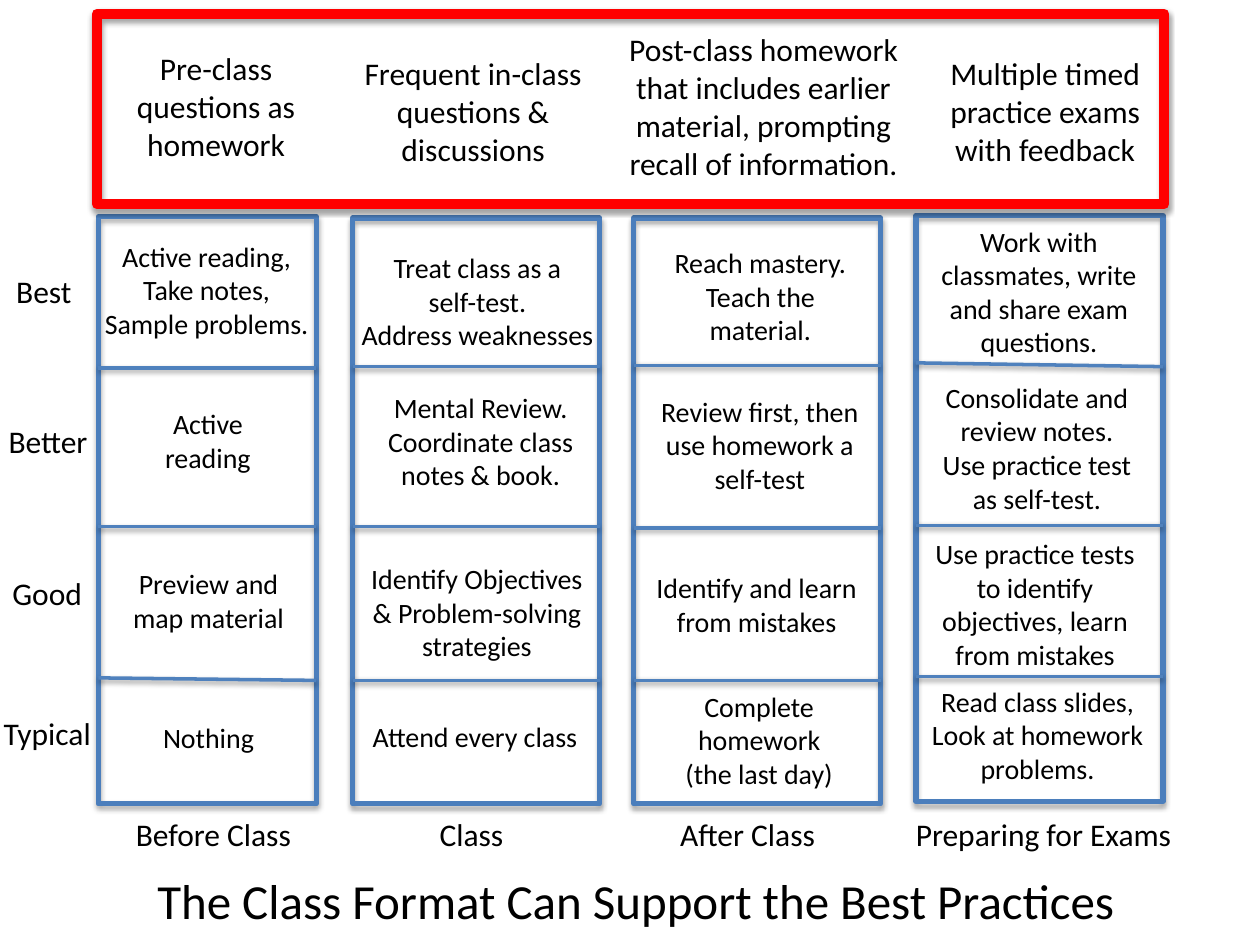
from lxml.etree import SubElement
from pptx import Presentation
from pptx.dml.color import RGBColor
from pptx.enum.shapes import MSO_CONNECTOR as Connector, MSO_SHAPE as Shape
from pptx.enum.text import MSO_AUTO_SIZE as AutoSize, PP_ALIGN as Align
from pptx.oxml.ns import qn
from pptx.util import Inches, Pt

FRAME, DIVIDER, RED, BLACK = "4B7EBC", "4F81BD", "FF0000", "000000"

TITLE = ("The Class Format Can Support the Best Practices", (1.15, 6.86, 8.06, 0.57))

LEVELS = [
    ("Best", (0.03, 2.11, 0.65, 0.4)),
    ("Better", (-0.03, 3.3, 0.84, 0.4)),
    ("Good", (0, 4.51, 0.76, 0.4)),
    ("Typical", (-0.07, 5.62, 0.92, 0.4)),
]

STAGES = [
    ("Before Class", (0.98, 6.42, 1.43, 0.4)),
    ("Class", (3.39, 6.42, 0.71, 0.4)),
    ("After Class", (5.3, 6.42, 1.28, 0.4)),
    ("Preparing for Exams", (7.17, 6.42, 2.23, 0.4)),
]

SUPPORTS = [
    ("Pre-class questions as homework", (0.85, 0.34, 1.73, 1.01)),
    ("Frequent in-class questions & discussions", (2.79, 0.38, 1.93, 1.01)),
    ("Post-class homework that includes earlier material, prompting "
     "recall of information.", (4.74, 0.19, 2.64, 1.31)),
    ("Multiple timed practice exams with feedback", (7.24, 0.38, 2.11, 1.01)),
]

COLUMNS = [
    {
        "frame": (0.78, 1.72, 1.73, 4.66),
        "dividers": [(2.92, 2.92), (4.18, 4.18), (5.38, 5.4)],
        "practices": [
            ("Active reading, Take notes,\nSample problems.", (0.68, 1.85, 1.92, 0.91)),
            ("Active reading", (1.09, 3.18, 1.12, 0.64)),
            ("Preview and map material", (0.91, 4.45, 1.49, 0.64)),
            ("Nothing", (1.19, 5.67, 0.93, 0.37)),
        ],
    },
    {
        "frame": (2.8, 1.73, 1.96, 4.65),
        "dividers": [(2.91, 2.91), (4.18, 4.18), (5.4, 5.4)],
        "practices": [
            ("Treat class as a\nself-test.\nAddress weaknesses", (2.76, 1.94, 2.06, 0.91)),
            ("Mental Review. Coordinate class\nnotes & book.", (2.93, 3.05, 1.77, 0.91)),
            ("Identify Objectives\n& Problem-solving strategies", (2.79, 4.41, 1.99, 0.91)),
            ("Attend every class", (2.84, 5.66, 1.86, 0.37)),
        ],
    },
    {
        "frame": (5.03, 1.73, 1.96, 4.65),
        "dividers": [(2.9, 2.9), (4.19, 4.19), (5.4, 5.4)],
        "practices": [
            ("Reach mastery.\nTeach the material.", (5.13, 1.9, 1.81, 0.91)),
            ("Review first, then use homework a self-test", (5.09, 3.08, 1.88, 0.91)),
            ("Identify and learn from mistakes", (5.02, 4.48, 1.97, 0.64)),
            ("Complete homework\n(the last day)", (5.12, 5.42, 1.81, 0.91)),
        ],
    },
    {
        "frame": (7.27, 1.71, 1.96, 4.65),
        "dividers": [(2.88, 2.91), (4.17, 4.17), (5.37, 5.37)],
        "practices": [
            ("Work with classmates, write and share exam questions.", (7.3, 1.73, 1.89, 1.18)),
            ("Consolidate and review notes.\nUse practice test as self-test.",
             (7.28, 2.97, 1.9, 1.18)),
            ("Use practice tests to identify objectives, learn from mistakes",
             (7.23, 4.21, 1.97, 1.18)),
            ("Read class slides, Look at homework problems.", (7.26, 5.38, 1.95, 0.91)),
        ],
    },
]


def color(value):
    return RGBColor.from_string(value)


class PracticeSlide:
    """Draws text, frames and dividers on one slide in a shared style."""

    def __init__(self, slide, font="Calibri"):
        self.slide = slide
        self.shapes = slide.shapes
        self.font = font

    def text(self, content, box, size=18, align=Align.LEFT, wrap=False, fill=BLACK):
        frame = self.shapes.add_textbox(*map(Inches, box)).text_frame
        frame.word_wrap = wrap
        frame.auto_size = AutoSize.SHAPE_TO_FIT_TEXT
        frame.text = content
        for paragraph in frame.paragraphs:
            paragraph.alignment = align
            paragraph.font.name = self.font
            paragraph.font.size = Pt(size)
            paragraph.font.color.rgb = color(fill)

    def frame(self, box, stroke, width):
        shape = self.shapes.add_shape(Shape.RECTANGLE, *map(Inches, box))
        shape.fill.background()
        self.outline(shape, stroke, width)
        shape.shadow.inherit = False
        self.shadow(shape._element.spPr.find(qn("a:effectLst")), 1.8, 35)

    def divider(self, left, right, start, end):
        line = self.shapes.add_connector(
            Connector.STRAIGHT, *map(Inches, (left, start, right, end)))
        self.outline(line, DIVIDER, 2)
        self.shadow(SubElement(line._element.spPr, qn("a:effectLst")), 1.6, 38)

    def outline(self, shape, stroke, width):
        shape.line.color.rgb = color(stroke)
        shape.line.width = Pt(width)

    def shadow(self, effects, distance, opacity):
        outer = SubElement(effects, qn("a:outerShdw"), blurRad=str(Pt(3.1)),
                           dist=str(Pt(distance)), dir="5400000", rotWithShape="0")
        black = SubElement(outer, qn("a:srgbClr"), val=BLACK)
        SubElement(black, qn("a:alpha"), val=str(opacity * 1000))

    def column(self, frame, dividers, practices):
        self.frame(frame, FRAME, 3)
        left, _, width, _ = frame
        for start, end in dividers:
            self.divider(left, left + width, start, end)
        for content, box in practices:
            one_line = box[3] < 0.4
            self.text(content, box, size=16, wrap=not one_line, align=Align.CENTER)


def main():
    presentation = Presentation()
    presentation.slide_width = Inches(10)
    presentation.slide_height = Inches(7.5)
    page = PracticeSlide(presentation.slides.add_slide(presentation.slide_layouts[6]))
    for label, box in LEVELS + STAGES:
        page.text(label, box)
    for column in COLUMNS:
        page.column(**column)
    page.text(*TITLE, size=28)
    for support, box in SUPPORTS:
        page.text(support, box, align=Align.CENTER, wrap=True)
    page.frame((0.77, 0.11, 8.47, 1.51), RED, 6)
    presentation.save("out.pptx")


if __name__ == "__main__":
    main()
